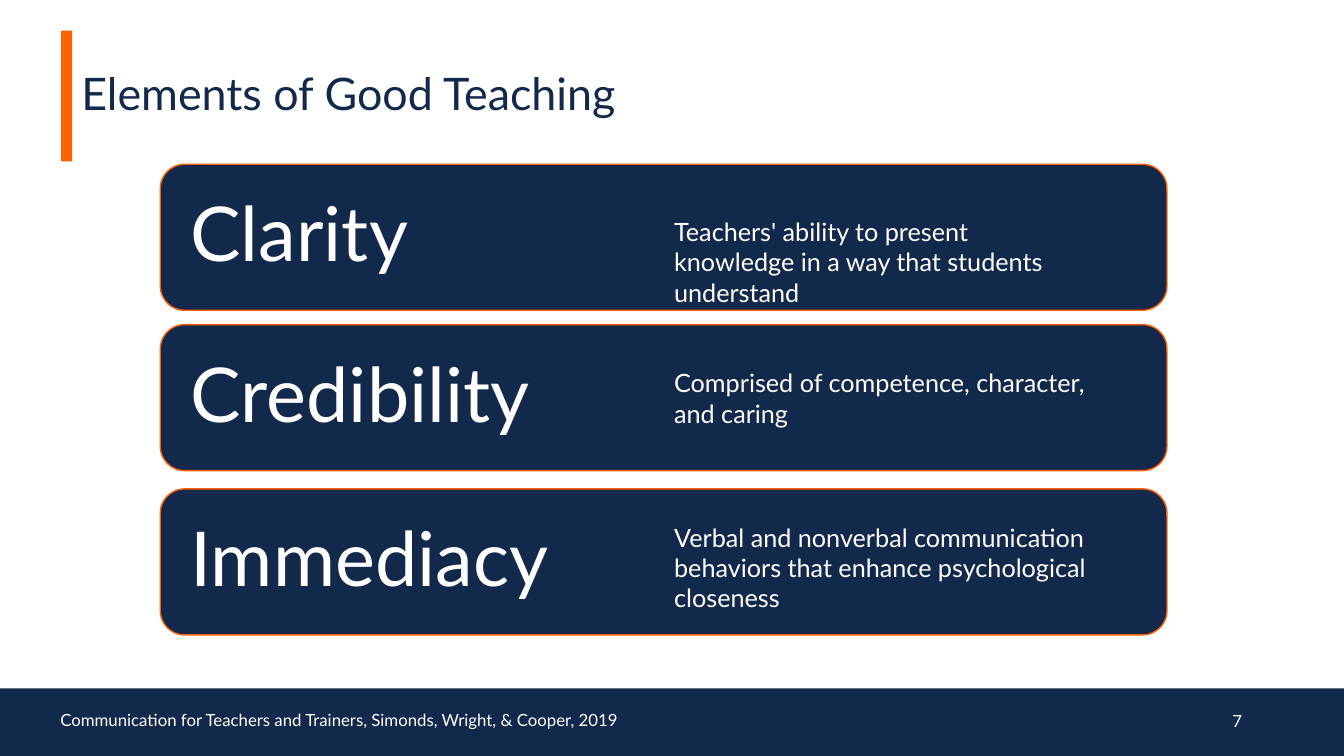
from pptx import Presentation
from pptx import util as u
from pptx.dml.color import RGBColor
from pptx.enum import shapes, text

# Content
TITLE = "Elements of Good Teaching"
SOURCE = "Communication for Teachers and Trainers, Simonds, Wright, & Cooper, 2019"
PAGE = "7"
# (element, card top in cm, definition, definition top in cm)
ELEMENTS = [
    ("Clarity", 4.14,
     "Teachers' ability to present knowledge in a way that students understand", 5.33),
    ("Credibility", 8.18,
     "Comprised of competence, character, and caring", 9.14),
    ("Immediacy", 12.32,
     "Verbal and nonverbal communication behaviors that enhance psychological closeness", 13.03),
]
COLORS = {"navy": "13294B", "orange": "FF5F05", "white": "FFFFFF"}
FONT = "Lato"

# Layout, in cm
SLIDE_W, SLIDE_H = 33.87, 19.05
FOOTER_H = 1.7
CARD_X, CARD_W, CARD_H = 4.04, 25.37, 3.68
CARD_PAD = 0.18
DEF_X, DEF_W, DEF_H = 16.74, 10.9, 1.8

prs = Presentation()
prs.slide_width, prs.slide_height = u.Cm(SLIDE_W), u.Cm(SLIDE_H)
s = prs.slides.add_slide(prs.slide_layouts[6])


def color(name):
    return RGBColor.from_string(COLORS[name])


def add_box(kind, x, y, w, h, fill, line=None):
    sp = s.shapes.add_shape(kind, u.Cm(x), u.Cm(y), u.Cm(w), u.Cm(h))
    sp.shadow.inherit = False
    sp.fill.solid()
    sp.fill.fore_color.rgb = color(fill)
    if line:
        sp.line.color.rgb = color(line)
        sp.line.width = u.Pt(1)
    else:
        sp.line.fill.background()
    return sp


def add_text(content, x, y, w, h, size, ink="white", anchor="MIDDLE",
             align="LEFT", spacing=1.0, inset=None):
    sp = s.shapes.add_textbox(u.Cm(x), u.Cm(y), u.Cm(w), u.Cm(h))
    tf = sp.text_frame
    tf.word_wrap = True
    tf.vertical_anchor = text.MSO_ANCHOR[anchor]
    if inset is not None:
        tf.margin_left = tf.margin_right = u.Cm(inset)
        tf.margin_top = tf.margin_bottom = u.Cm(inset)
    p = tf.paragraphs[0]
    p.alignment = text.PP_ALIGN[align]
    p.line_spacing = spacing
    r = p.add_run()
    r.text = content
    r.font.name, r.font.size = FONT, u.Pt(size)
    r.font.color.rgb = color(ink)
    return sp


# Title with accent bar, and footer band
RECT = shapes.MSO_SHAPE.RECTANGLE
add_box(RECT, 1.54, 0.77, 0.28, 3.3, "orange")
add_box(RECT, 0, SLIDE_H - FOOTER_H, SLIDE_W, FOOTER_H, "navy")
add_text(TITLE, 1.8, 0.76, 28.8, 3.3, 32, ink="navy", spacing=0.9)

# Cards with element name and definition
for name, card_y, definition, def_y in ELEMENTS:
    add_box(shapes.MSO_SHAPE.ROUNDED_RECTANGLE, CARD_X, card_y, CARD_W, CARD_H,
            "navy", line="orange")
    add_text(name, CARD_X + CARD_PAD, card_y + CARD_PAD, CARD_W - 2 * CARD_PAD,
             CARD_H - 2 * CARD_PAD, 54, spacing=0.9, inset=0.58)
    add_text(definition, DEF_X, def_y, DEF_W, DEF_H, 18, anchor="TOP")

# Footer text
add_text(SOURCE, 1.27, 17.65, 22.66, 1.02, 12, spacing=0.9)
add_text(PAGE, 23.93, 17.65, 7.62, 1.02, 12, align="RIGHT")

prs.save("out.pptx")
